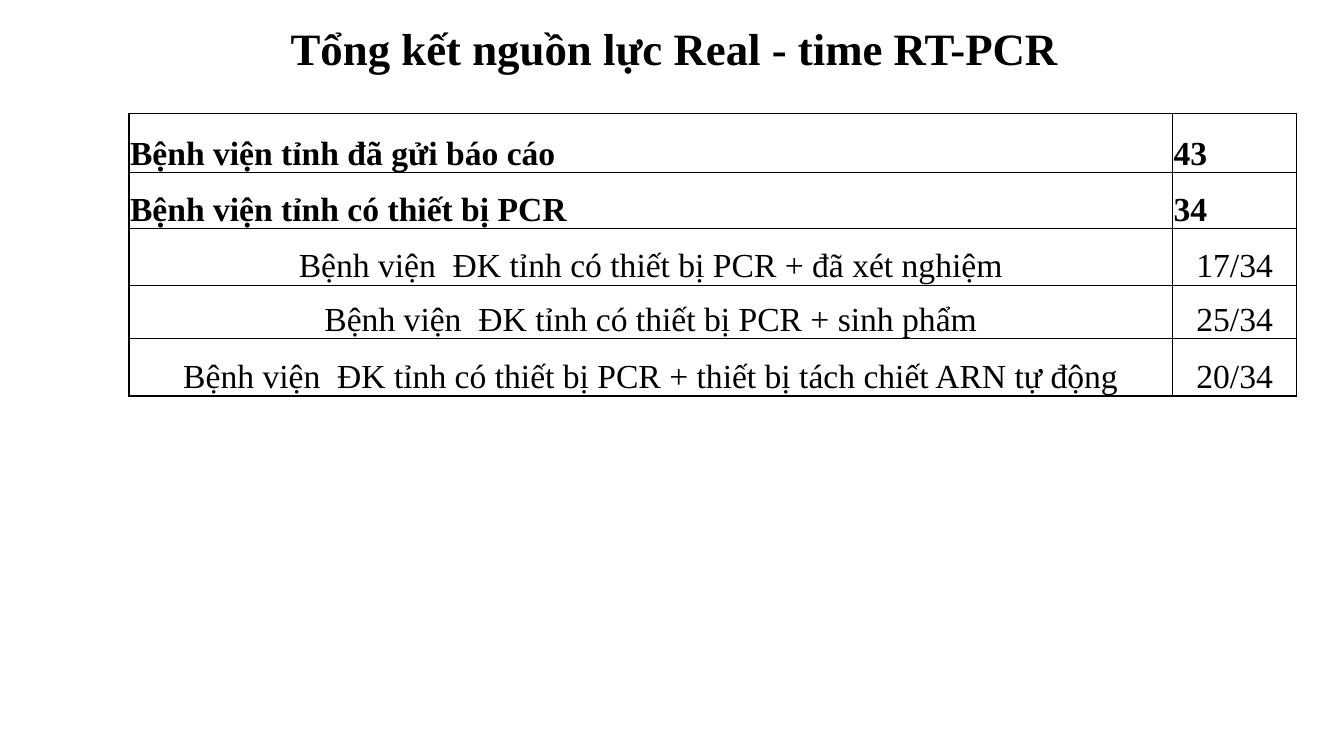
import pptx
import pptx.dml.color
import pptx.enum.text
import pptx.oxml
import pptx.oxml.ns
import pptx.util
from pptx.util import Inches

COLORS = {"text": "000000", "border": "000000", "background": "FFFFFF"}
ALIGN = pptx.enum.text.PP_ALIGN
ANCHOR = pptx.enum.text.MSO_ANCHOR


class SlideBuilder:
    font = "Times New Roman"
    outer_border = 1
    inner_border = 0.5

    def __init__(self, slide):
        self.slide = slide
        fill = slide.background.fill
        fill.solid()
        fill.fore_color.rgb = pptx.dml.color.RGBColor.from_string(COLORS["background"])

    def add_text(self, paragraph, text, size, bold, align):
        paragraph.alignment = align
        run = paragraph.add_run()
        run.text = text
        run.font.name = self.font
        run.font.size = pptx.util.Pt(size)
        run.font.bold = bold
        run.font.color.rgb = pptx.dml.color.RGBColor.from_string(COLORS["text"])

    def title(self, text, left, top, width, height):
        box = self.slide.shapes.add_textbox(
            Inches(left), Inches(top), Inches(width), Inches(height))
        frame = box.text_frame
        frame.word_wrap = True
        frame.vertical_anchor = ANCHOR.MIDDLE
        paragraph = frame.paragraphs[0]
        paragraph.line_spacing = 0.9
        self.add_text(paragraph, text, 32, True, ALIGN.CENTER)

    def border(self, cell, side, points):
        line = pptx.oxml.parse_xml(
            f'<a:ln{side} {pptx.oxml.ns.nsdecls("a")} w="{pptx.util.Pt(points)}">'
            f'<a:solidFill><a:srgbClr val="{COLORS["border"]}"/></a:solidFill>'
            f'</a:ln{side}>')
        cell._tc.get_or_add_tcPr().append(line)

    def table(self, rows, left, top, widths, heights):
        table = self.slide.shapes.add_table(
            len(heights), len(widths), Inches(left), Inches(top),
            Inches(sum(widths)), Inches(sum(heights))).table
        table.first_row = table.horz_banding = False
        for column, width in zip(table.columns, widths):
            column.width = Inches(width)
        for row, height in zip(table.rows, heights):
            row.height = Inches(height)

        last_row, last_column = len(heights) - 1, len(widths) - 1
        for r, (is_total, *texts) in enumerate(rows):
            for c, text in enumerate(texts):
                cell = table.cell(r, c)
                cell.margin_left = cell.margin_right = cell.margin_top = Inches(0.01)
                cell.margin_bottom = 0
                cell.vertical_anchor = ANCHOR.BOTTOM
                align = ALIGN.LEFT if is_total else ALIGN.CENTER
                self.add_text(cell.text_frame.paragraphs[0], text, 24, is_total, align)
                # Outer edges are heavier than inner ones
                outer_edges = {"L": c == 0, "R": c == last_column,
                               "T": r == 0, "B": r == last_row}
                for side, is_outer in outer_edges.items():
                    self.border(cell, side,
                                self.outer_border if is_outer else self.inner_border)
                cell.fill.background()


def main():
    presentation = pptx.Presentation()
    presentation.slide_width = Inches(13.33)
    presentation.slide_height = Inches(7.5)
    builder = SlideBuilder(presentation.slides.add_slide(presentation.slide_layouts[6]))

    # Heading
    builder.title("Tổng kết nguồn lực Real - time RT-PCR", 0.49, 0.13, 12.4, 0.75)

    # Hospital resources: is a total, description, count
    resources = [
        (True, "Bệnh viện tỉnh đã gửi báo cáo", "43"),
        (True, "Bệnh viện tỉnh có thiết bị PCR", "34"),
        (False, "Bệnh viện  ĐK tỉnh có thiết bị PCR + đã xét nghiệm", "17/34"),
        (False, "Bệnh viện  ĐK tỉnh có thiết bị PCR + sinh phẩm", "25/34"),
        (False, "Bệnh viện  ĐK tỉnh có thiết bị PCR + thiết bị tách chiết ARN tự động",
         "20/34"),
    ]
    builder.table(resources, 1.28, 1.13, [10.35, 1.23], [0.58, 0.56, 0.56, 0.53, 0.57])

    presentation.save("out.pptx")


if __name__ == "__main__":
    main()
